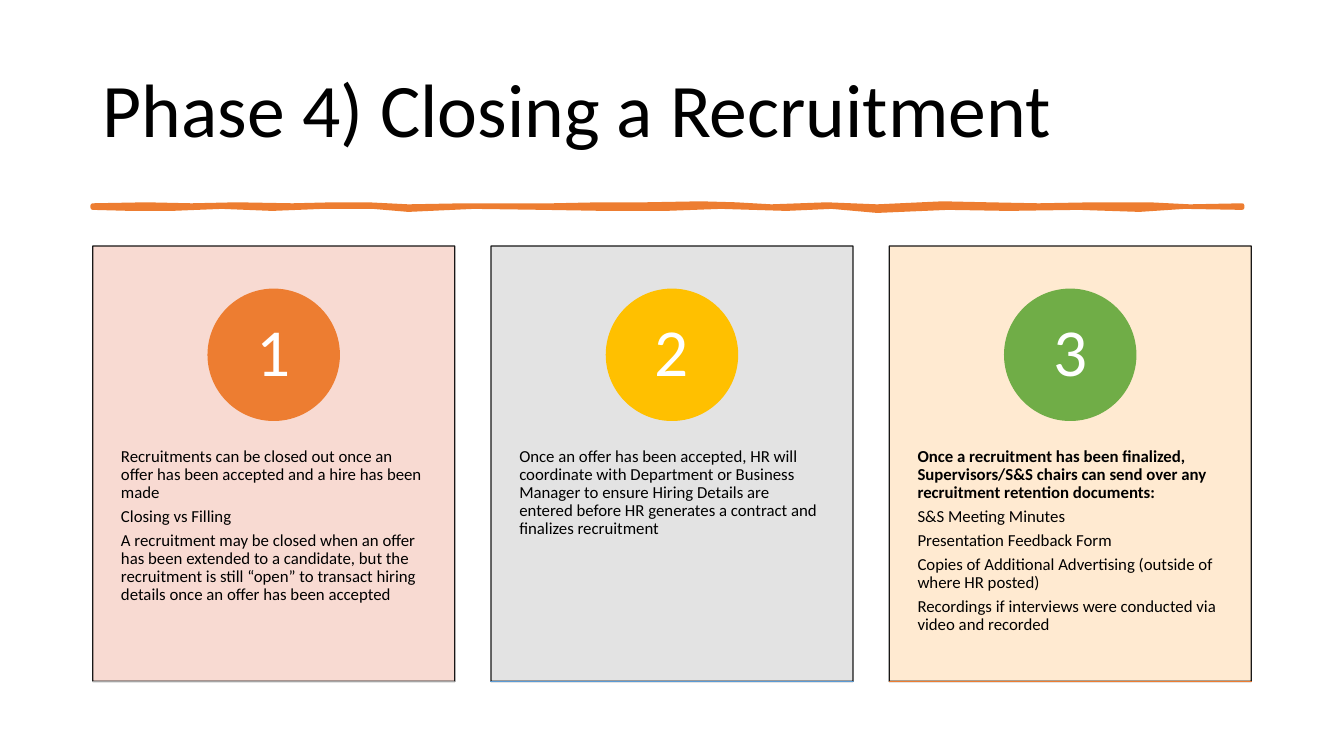
import pptx
import pptx.util
import pptx.dml.color
import pptx.enum.shapes
import pptx.enum.text
import pptx.oxml.ns
import lxml.etree
from dataclasses import dataclass

Inches, Pt = pptx.util.Inches, pptx.util.Pt
MSO_SHAPE = pptx.enum.shapes.MSO_SHAPE
PP_ALIGN = pptx.enum.text.PP_ALIGN
MSO_ANCHOR = pptx.enum.text.MSO_ANCHOR

TITLE = "Phase 4) Closing a Recruitment"

# One card each: card colour, circle colour, base line colour, bold first line, paragraphs
CARDS = [
    ("F8D7CE", "ED7D31", "A5A5A5", False, [
        "Recruitments can be closed out once an offer has been accepted and a hire has been made",
        "Closing vs Filling",
        "A recruitment may be closed when an offer has been extended to a candidate, but the "
        "recruitment is still “open” to transact hiring details once an offer has been accepted",
    ]),
    ("E1E1E1", "FFC000", "5B9BD5", False, [
        "Once an offer has been accepted, HR will coordinate with Department or Business Manager "
        "to ensure Hiring Details are entered before HR generates a contract and finalizes recruitment",
    ]),
    ("FFE8CC", "70AD47", "ED7D31", True, [
        "Once a recruitment has been finalized, Supervisors/S&S chairs can send over any "
        "recruitment retention documents:",
        "S&S Meeting Minutes",
        "Presentation Feedback Form",
        "Copies of Additional Advertising (outside of where HR posted)",
        "Recordings if interviews were conducted via video and recorded",
    ]),
]

# Upper and lower edge of the brush stroke under the title, in inches
STROKE_TOP = [
    (0.92, 2.04), (1.45, 2.03), (1.9, 2.04), (2.35, 2.03), (2.9, 2.04), (3.31, 2.03),
    (3.65, 2.03), (4.05, 2.05), (4.6, 2.04), (5.1, 2.04), (5.48, 2.04), (5.95, 2.03),
    (6.4, 2.03), (6.95, 2.02), (7.3, 2.03), (7.65, 2.05), (8.2, 2.03), (8.7, 2.05),
    (9.35, 2.02), (9.8, 2.03), (10.3, 2.04), (10.85, 2.03), (11.4, 2.03), (11.8, 2.05),
    (12.32, 2.04),
]
STROKE_BOTTOM = [
    (12.32, 2.06), (11.75, 2.05), (11.3, 2.08), (10.7, 2.06), (10.0, 2.07), (9.4, 2.06),
    (8.7, 2.09), (8.25, 2.05), (7.8, 2.07), (7.15, 2.05), (6.6, 2.07), (6.0, 2.07),
    (5.4, 2.06), (4.7, 2.05), (4.05, 2.08), (3.7, 2.05), (3.2, 2.05), (2.7, 2.07),
    (2.2, 2.05), (1.7, 2.07), (1.3, 2.07), (0.92, 2.06),
]


@dataclass(frozen=True)
class Theme:
    font: str = "Calibri"
    text: str = "000000"
    number: str = "FFFFFF"
    stroke: str = "ED7D31"
    title_size: int = 54
    number_size: int = 48
    body_size: int = 12
    body_gap: float = 4.2
    line_width: int = 1
    stroke_width: float = 3.25
    card_alpha: int = 90


THEME = Theme()
LEFT, CARD_TOP, CARD_W, CARD_H, CARD_PITCH = 0.92, 2.44, 3.59, 4.32, 3.95
CIRCLE, CIRCLE_DROP = 1.3, 0.43
BODY_DROP, BODY_H = 1.64, 2.59


def rgb(value):
    return pptx.dml.color.RGBColor.from_string(value)


def set_alpha(color_parent, percent):
    """Make the solid colour inside the given XML element partly transparent."""
    color = color_parent.find(".//" + pptx.oxml.ns.qn("a:srgbClr"))
    alpha = lxml.etree.SubElement(color, pptx.oxml.ns.qn("a:alpha"))
    alpha.set("val", str(percent * 1000))


def paint(sp, fill, line, width=THEME.line_width):
    sp.shadow.inherit = False
    sp.fill.solid()
    sp.fill.fore_color.rgb = rgb(fill)
    sp.line.color.rgb = rgb(line)
    sp.line.width = Pt(width)


def add_painted(s, kind, x, y, width, height, fill, line):
    sp = s.shapes.add_shape(kind, Inches(x), Inches(y), Inches(width), Inches(height))
    paint(sp, fill, line)
    return sp


def write(tf, paragraphs, size, color, insets, anchor, align=PP_ALIGN.LEFT, gap=0):
    tf.word_wrap = True
    tf.auto_size = pptx.enum.text.MSO_AUTO_SIZE.NONE
    tf.vertical_anchor = anchor
    tf.margin_left = tf.margin_right = Inches(insets[0])
    tf.margin_top = tf.margin_bottom = Inches(insets[1])
    tf.text = "\n".join(paragraphs)
    for p in tf.paragraphs:
        p.alignment = align
        p.line_spacing = 0.9
        p.space_before = Pt(0)
        p.space_after = Pt(gap)
        for r in p.runs:
            r.font.name = THEME.font
            r.font.size = Pt(size)
            r.font.color.rgb = rgb(color)


def add_title(s):
    sp = s.shapes.title
    sp.left, sp.top, sp.width, sp.height = map(Inches, (LEFT, 0.4, 11.5, 1.45))
    write(sp.text_frame, [TITLE], THEME.title_size, THEME.text, (0.1, 0.05), MSO_ANCHOR.MIDDLE)


def add_brush_stroke(s):
    outline = [(Inches(x), Inches(y)) for x, y in STROKE_TOP + STROKE_BOTTOM]
    builder = s.shapes.build_freeform(*outline[0])
    builder.add_line_segments(outline[1:], close=True)
    paint(builder.convert_to_shape(), THEME.stroke, THEME.stroke, THEME.stroke_width)


def add_card(s, index, card_color, circle_color, base_color, bold_first, paragraphs):
    x = LEFT + index * CARD_PITCH

    card = add_painted(s, MSO_SHAPE.RECTANGLE, x, CARD_TOP, CARD_W, CARD_H,
                       card_color, THEME.text)
    properties = card._element.spPr
    for tag in ("a:solidFill", "a:ln"):
        set_alpha(properties.find(pptx.oxml.ns.qn(tag)), THEME.card_alpha)

    body = s.shapes.add_textbox(Inches(x), Inches(CARD_TOP + BODY_DROP),
                                Inches(CARD_W), Inches(BODY_H))
    write(body.text_frame, paragraphs, THEME.body_size, THEME.text, (0.28, 0.36),
          MSO_ANCHOR.TOP, gap=THEME.body_gap)
    body.text_frame.paragraphs[0].runs[0].font.bold = bold_first

    circle = add_painted(s, MSO_SHAPE.OVAL, x + (CARD_W - CIRCLE) / 2, CARD_TOP + CIRCLE_DROP,
                         CIRCLE, CIRCLE, circle_color, circle_color)
    write(circle.text_frame, [str(index + 1)], THEME.number_size, THEME.number, (0.1, 0.01),
          MSO_ANCHOR.MIDDLE, PP_ALIGN.CENTER)

    add_painted(s, MSO_SHAPE.RECTANGLE, x, CARD_TOP + CARD_H, CARD_W, 0, base_color, base_color)


def main():
    prs = pptx.Presentation()
    prs.slide_width, prs.slide_height = Inches(13.33), Inches(7.5)
    s = prs.slides.add_slide(prs.slide_layouts.get_by_name("Title Only"))
    add_title(s)
    add_brush_stroke(s)
    for index, card in enumerate(CARDS):
        add_card(s, index, *card)
    prs.save("out.pptx")


if __name__ == "__main__":
    main()
